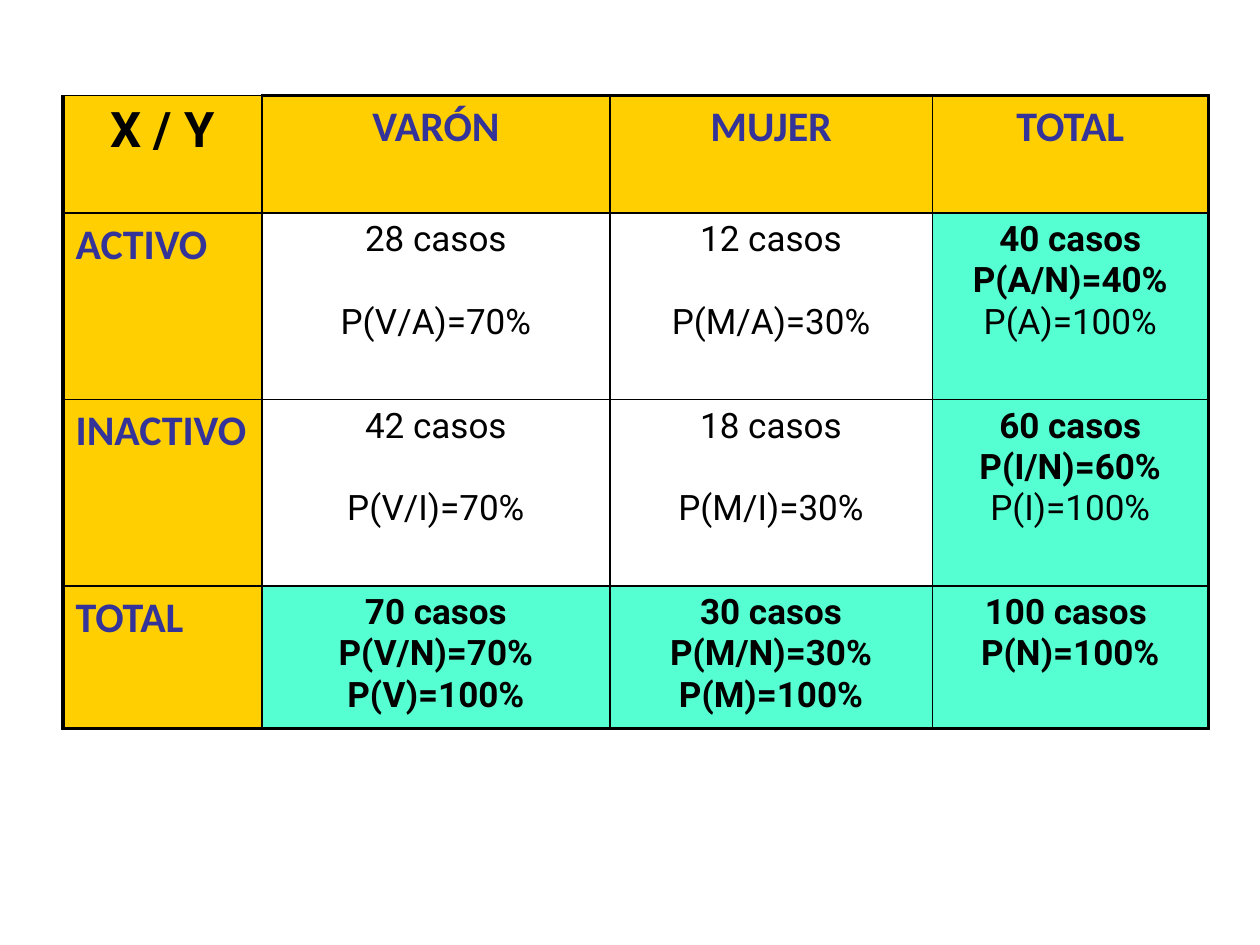
from lxml.etree import SubElement
from pptx import Presentation
from pptx.dml.color import RGBColor
from pptx.enum.text import PP_ALIGN
from pptx.oxml.ns import qn
from pptx.util import Inches, Pt

BLACK = RGBColor(0x00, 0x00, 0x00)
INDIGO = RGBColor(0x33, 0x33, 0x99)
YELLOW = RGBColor(0xFF, 0xCF, 0x01)
MINT = RGBColor(0x56, 0xFF, 0xD2)

COLUMN_WIDTHS = [1.58, 2.76, 2.56, 2.19]
ROW_HEIGHTS = [0.93, 1.48, 1.48, 1.13]
CONTENT = [
    [["X / Y"], ["VARÓN"], ["MUJER"], ["TOTAL"]],
    [["ACTIVO"], ["28 casos", "P(V/A)=70%"], ["12 casos", "P(M/A)=30%"],
     ["40 casos", "P(A/N)=40%", "P(A)=100%"]],
    [["INACTIVO"], ["42 casos", "P(V/I)=70%"], ["18 casos", "P(M/I)=30%"],
     ["60 casos", "P(I/N)=60%", "P(I)=100%"]],
    [["TOTAL"], ["70 casos", "P(V/N)=70%", "P(V)=100%"],
     ["30 casos", "P(M/N)=30%", "P(M)=100%"], ["100 casos ", "P(N)=100%"]],
]


class ContingencySlide:
    """Holds the table style and the current slide."""
    label_font, body_font = "Calibri", "Roboto"
    corner_size, label_size, body_size = 28, 24, 20
    thin, thick = 1, 2.25
    line_gap = 23.5  # one body line, in points

    def __init__(self, deck):
        self.page = deck.slides.add_slide(deck.slide_layouts[6])

    def add_grid(self, left, top):
        frame = self.page.shapes.add_table(
            len(ROW_HEIGHTS), len(COLUMN_WIDTHS), Inches(left), Inches(top),
            Inches(sum(COLUMN_WIDTHS)), Inches(sum(ROW_HEIGHTS)))
        table = frame.table
        table.first_row = table.horz_banding = False
        for column, width in zip(table.columns, COLUMN_WIDTHS):
            column.width = Inches(width)
        for row, height in zip(table.rows, ROW_HEIGHTS):
            row.height = Inches(height)
        for r, row in enumerate(CONTENT):
            for c, lines in enumerate(row):
                self.fill_cell(table.cell(r, c), r, c, lines)

    def fill_cell(self, cell, r, c, lines):
        last_row, last_column = len(ROW_HEIGHTS) - 1, len(COLUMN_WIDTHS) - 1
        is_label = r == 0 or c == 0
        is_total = not is_label and (r == last_row or c == last_column)

        # Borders come before the fill in the cell properties
        self.add_border(cell, "a:lnL", c == 0)
        self.add_border(cell, "a:lnR", c == last_column)
        self.add_border(cell, "a:lnT", r == 0 and c > 0)
        self.add_border(cell, "a:lnB", r == last_row)
        if is_label or is_total:
            cell.fill.solid()
            cell.fill.fore_color.rgb = YELLOW if is_label else MINT
        else:
            cell.fill.background()

        # Text
        cell.text_frame.text = "\n".join(lines)
        for index, para in enumerate(cell.text_frame.paragraphs):
            para.alignment = PP_ALIGN.LEFT if c == 0 and r > 0 else PP_ALIGN.CENTER
            if index and not is_total:
                para.space_before = Pt(self.line_gap)
            row_sum = is_total and r < last_row and index == 2
            bold = (is_label or is_total) and not row_sum
            for span in para.runs:
                self.style_span(span, is_label, r == c == 0, bold)

    def style_span(self, span, is_label, is_corner, bold):
        named = is_label and not is_corner
        size = self.label_size if named else self.body_size
        span.font.name = self.label_font if named else self.body_font
        span.font.size = Pt(self.corner_size if is_corner else size)
        span.font.color.rgb = INDIGO if named else BLACK
        span.font.bold = bold

    def add_border(self, cell, side, outer):
        properties = cell._tc.get_or_add_tcPr()
        width = Pt(self.thick if outer else self.thin)
        line = SubElement(properties, qn(side), w=str(int(width)))
        fill = SubElement(line, qn("a:solidFill"))
        SubElement(fill, qn("a:srgbClr"), val=str(BLACK))


def main():
    deck = Presentation()
    deck.slide_width, deck.slide_height = Inches(10), Inches(7.5)
    ContingencySlide(deck).add_grid(0.5, 0.76)
    deck.save("out.pptx")


if __name__ == "__main__":
    main()
